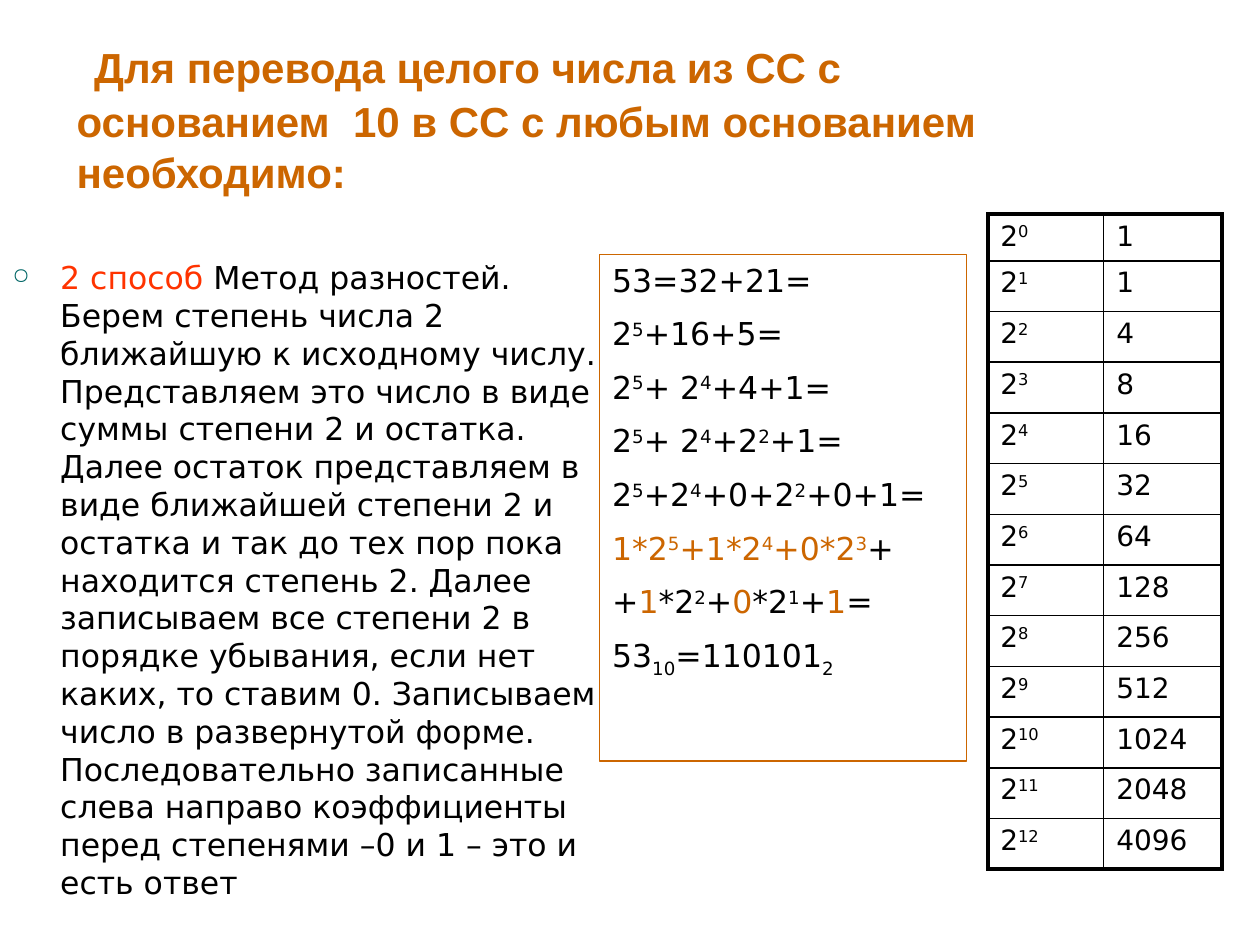
from lxml import etree
from pptx import Presentation
from pptx.dml.color import RGBColor
from pptx.enum.shapes import MSO_SHAPE
from pptx.enum.text import MSO_ANCHOR, PP_ALIGN
from pptx.oxml.ns import qn
from pptx.util import Inches, Pt

RECTANGLE = MSO_SHAPE.RECTANGLE
TOP, BOTTOM = MSO_ANCHOR.TOP, MSO_ANCHOR.BOTTOM
LEFT = PP_ALIGN.LEFT

BLACK, ORANGE, RED, TEAL = "000000", "CC6600", "FF3300", "006666"
HEADING_FONT, TEXT_FONT = "Arial", "DejaVu Sans"
THIN, THICK = 1, 2.25

TITLE = ("Для перевода целого числа из СС с основанием  10 в СС "
         "с любым основанием  необходимо:")
METHOD_NAME = "2 способ"
METHOD = (" Метод разностей. Берем степень числа 2 ближайшую к исходному числу. "
          "Представляем это число в виде суммы степени 2 и остатка. Далее остаток "
          "представляем в виде ближайшей степени 2 и остатка и так до тех пор пока "
          "находится степень 2. Далее записываем все степени 2 в порядке убывания, "
          "если нет каких, то ставим 0. Записываем число в развернутой форме. "
          "Последовательно записанные слева направо коэффициенты перед степенями "
          "–0 и 1 – это и есть ответ")

# "|" separates runs; "!" marks an orange run, "^" a superscript, "_" a subscript
EXPANSION = [
    "53=32+21=",
    "2|^5|+16+5=",
    "2|^5|+ 2|^4|+4+1=",
    "2|^5|+ 2|^4|+2|^2|+1=",
    "2|^5|+2|^4|+0+2|^2|+0+1=",
    "!1*2|!^5|!+1*2|!^4|!+0*2|!^3|+",
    "+|!1|*2|^2|+|!0|*2|^1|+|!1|=",
    "53|_10|=110101|_2",
]
BASELINES = {"^": "30000", "_": "-25000"}
POWER_VALUES = [1, 1, 4, 8, 16, 32, 64, 128, 256, 512, 1024, 2048, 4096]


def rgb(color):
    return RGBColor.from_string(color)


def style_paragraph(paragraph, size, font=TEXT_FONT, color=BLACK, bold=False):
    paragraph.alignment = LEFT
    paragraph.font.name = font
    paragraph.font.size = Pt(size)
    paragraph.font.color.rgb = rgb(color)
    paragraph.font.bold = bold


def add_run(paragraph, text, color=None):
    run = paragraph.add_run()
    run.text = text
    if color:
        run.font.color.rgb = rgb(color)
    return run


def add_formula(paragraph, formula):
    """Write a formula given in the run markup of EXPANSION."""
    for part in formula.split("|"):
        color = ORANGE if part.startswith("!") else None
        part = part.removeprefix("!")
        baseline = BASELINES.get(part[0])
        run = add_run(paragraph, part[1:] if baseline else part, color)
        if baseline:
            run.font._element.set("baseline", baseline)


def add_text_frame(slide, left, top, width, height, anchor=TOP):
    box = slide.shapes.add_textbox(Inches(left), Inches(top),
                                   Inches(width), Inches(height))
    box.text_frame.word_wrap = True
    box.text_frame.vertical_anchor = anchor
    return box.text_frame


def set_bullet(paragraph, character, color, percent, indent):
    properties = paragraph._p.get_or_add_pPr()
    properties.set("marL", str(Inches(indent)))
    properties.set("indent", str(-Inches(indent)))
    bullet_color = etree.SubElement(properties, qn("a:buClr"))
    etree.SubElement(bullet_color, qn("a:srgbClr"), val=color)
    etree.SubElement(properties, qn("a:buSzPct"), val=str(percent * 1000))
    etree.SubElement(properties, qn("a:buChar"), char=character)


def set_border(cell, side, width):
    line = etree.SubElement(cell._tc.get_or_add_tcPr(), qn(f"a:ln{side}"),
                            w=str(Pt(width)))
    fill = etree.SubElement(line, qn("a:solidFill"))
    etree.SubElement(fill, qn("a:srgbClr"), val=BLACK)


def add_title(slide):
    paragraph = add_text_frame(slide, 0.51, 0.36, 8, 1.25, BOTTOM).paragraphs[0]
    style_paragraph(paragraph, 24, HEADING_FONT, ORANGE, bold=True)
    add_run(paragraph, " ").font.size = Pt(36)
    add_run(paragraph, TITLE)


def add_method(slide):
    paragraph = add_text_frame(slide, 0, 2, 4.9, 5.5).paragraphs[0]
    style_paragraph(paragraph, 18)
    set_bullet(paragraph, "○", TEAL, 70, 0.38)
    add_run(paragraph, METHOD_NAME, RED)
    add_run(paragraph, METHOD)


def add_expansion(slide):
    panel = slide.shapes.add_shape(RECTANGLE, Inches(4.76), Inches(2.02),
                                   Inches(2.91), Inches(4.02))
    panel.shadow.inherit = False
    panel.fill.background()
    panel.line.color.rgb = rgb(ORANGE)
    panel.line.width = Pt(0.75)
    frame = panel.text_frame
    frame.word_wrap = True
    frame.vertical_anchor = TOP
    for index, formula in enumerate(EXPANSION):
        paragraph = frame.add_paragraph() if index else frame.paragraphs[0]
        style_paragraph(paragraph, 18)
        if index:
            paragraph.space_before = Pt(9)
        add_formula(paragraph, formula)


def add_powers_table(slide):
    last = len(POWER_VALUES) - 1
    height, first_height = 5.2, 0.37
    table = slide.shapes.add_table(last + 1, 2, Inches(7.84), Inches(1.7),
                                   Inches(1.86), Inches(height)).table
    table.first_row = table.horz_banding = False
    for column, width in zip(table.columns, (0.92, 0.94)):
        column.width = Inches(width)
    for power, value in enumerate(POWER_VALUES):
        row = table.rows[power]
        row.height = Inches((height - first_height) / last if power else first_height)
        for column, text in enumerate((f"2|^{power}", str(value))):
            cell = table.cell(power, column)
            paragraph = cell.text_frame.paragraphs[0]
            style_paragraph(paragraph, 16)
            add_formula(paragraph, text)
            outer_sides = {"L": column == 0, "R": column == 1,
                           "T": power == 0, "B": power == last}
            for side, is_outer in outer_sides.items():
                set_border(cell, side, THICK if is_outer else THIN)
            cell.fill.background()


def main():
    presentation = Presentation()
    presentation.slide_width = Inches(10)
    presentation.slide_height = Inches(7.5)
    slide = presentation.slides.add_slide(presentation.slide_layouts[6])
    add_title(slide)
    add_method(slide)
    add_powers_table(slide)
    add_expansion(slide)
    presentation.save("out.pptx")


if __name__ == "__main__":
    main()
